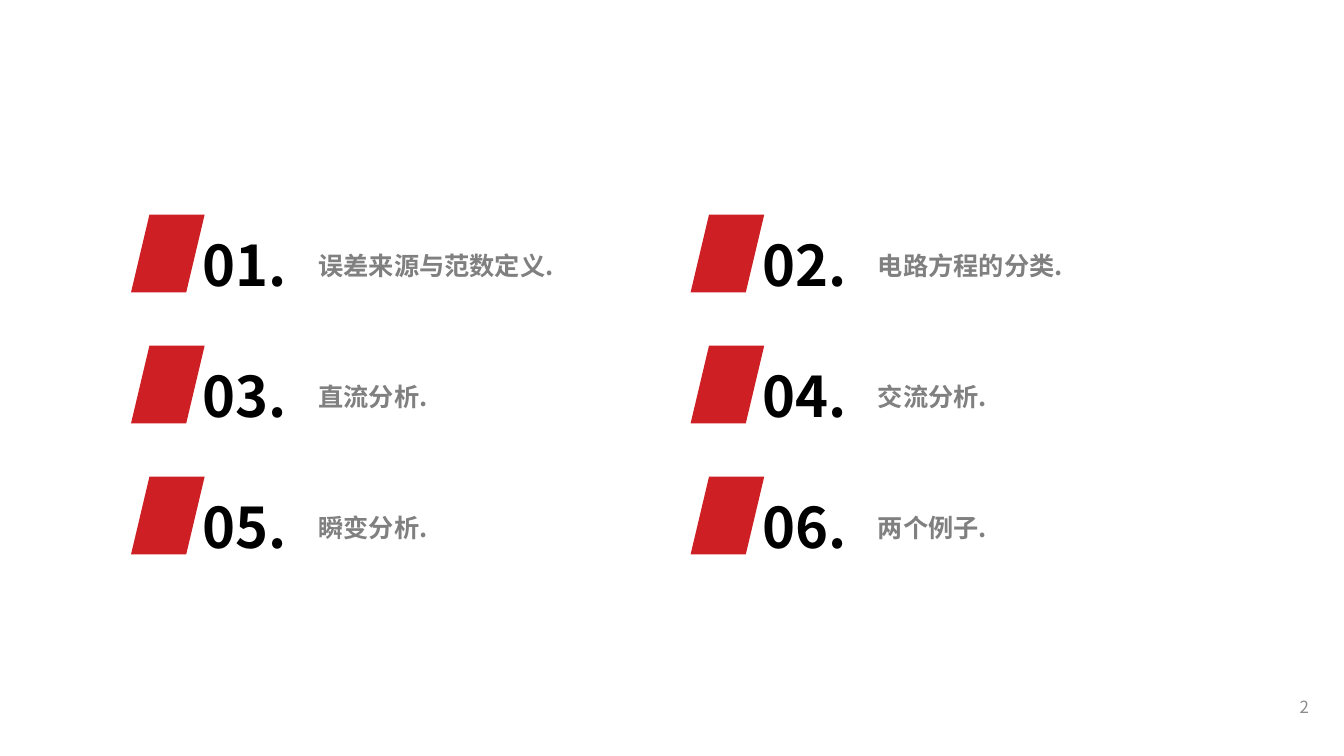
"""Build a contents slide with six numbered topics in a two-column grid."""
from dataclasses import dataclass
from typing import Any

from lxml import etree
from pptx import Presentation
from pptx import util as u
from pptx.dml.color import RGBColor
from pptx.enum import shapes, text
from pptx.oxml import ns

FACE = "Noto Sans CJK SC"
RED = "CD1F24"
COLS = 2
STEP_X, STEP_Y = 5.55, 1.3


@dataclass(frozen=True)
class Box:
    left: float
    top: float
    width: float
    height: float

    def shift(self, row: int, col: int) -> "Box":
        return Box(self.left + col * STEP_X, self.top + row * STEP_Y,
                   self.width, self.height)

    def place(self) -> list[u.Length]:
        return [u.Inches(n) for n in (self.left, self.top, self.width, self.height)]


@dataclass(frozen=True)
class Style:
    size: int
    color: str
    bold: bool = False
    wrap: bool = True
    align: Any = text.PP_ALIGN.LEFT
    anchor: Any = text.MSO_ANCHOR.TOP


NUMBER = Style(40, "000000", bold=True, wrap=False)
LABEL = Style(18, "808080", bold=True)
PAGE = Style(12, "8C8C8C", align=text.PP_ALIGN.RIGHT, anchor=text.MSO_ANCHOR.MIDDLE)

NUMBER_BOX = Box(1.91, 2.24, 1.05, 0.77)
LABEL_BOX = Box(3.06, 2.43, 2.93, 0.4)
MARK_BOX = Box(1.3, 2.13, 0.73, 0.77)
PAGE_BOX = Box(10.08, 6.81, 3, 0.4)

TOPICS = ["误差来源与范数定义.", "电路方程的分类.", "直流分析.",
          "交流分析.", "瞬变分析.", "两个例子."]


def paint(color: str) -> RGBColor:
    return RGBColor.from_string(color)


def write(parent: Any, box: Box, words: str, style: Style) -> None:
    frame = parent.add_textbox(*box.place()).text_frame
    frame.word_wrap = style.wrap
    frame.vertical_anchor = style.anchor
    para = frame.paragraphs[0]
    para.alignment = style.align
    run = para.add_run()
    run.text = words
    run.font.color.rgb = paint(style.color)
    look = {"name": FACE, "size": u.Pt(style.size), "bold": style.bold}
    for key, value in look.items():
        setattr(run.font, key, value)
    etree.SubElement(run.font._element, ns.qn("a:ea"), typeface=FACE)


def mark(parent: Any, box: Box) -> None:
    shape = parent.add_shape(shapes.MSO_SHAPE.PARALLELOGRAM, *box.place())
    shape.shadow.inherit = False
    shape.fill.solid()
    shape.fill.fore_color.rgb = paint(RED)
    shape.line.fill.background()


def main() -> None:
    deck = Presentation()
    deck.slide_width, deck.slide_height = u.Inches(13.33), u.Inches(7.5)
    slide = deck.slides.add_slide(deck.slide_layouts[6])
    write(slide.shapes, PAGE_BOX, "2", PAGE)
    for index, topic in enumerate(TOPICS):
        cell = divmod(index, COLS)
        group = slide.shapes.add_group_shape().shapes
        write(group, NUMBER_BOX.shift(*cell), f"{index + 1:02}.", NUMBER)
        write(group, LABEL_BOX.shift(*cell), topic, LABEL)
        mark(slide.shapes, MARK_BOX.shift(*cell))
    deck.save("out.pptx")


if __name__ == "__main__":
    main()
